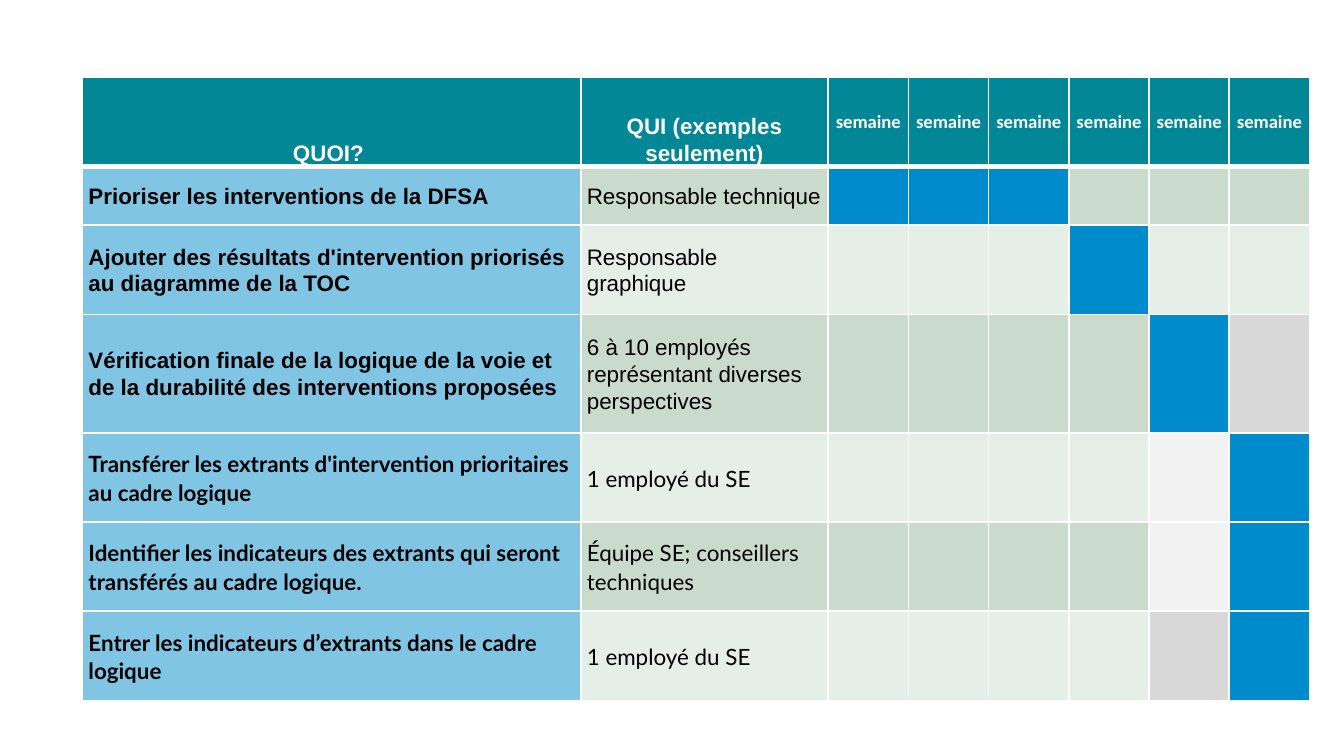
from lxml.etree import SubElement
from pptx import Presentation
from pptx.dml.color import RGBColor
from pptx.enum.text import MSO_ANCHOR as Anchor, PP_ALIGN as Align
from pptx.oxml.ns import qn
from pptx.util import Inches, Pt

TEAL, SKY, BLUE = "028796", "80C5E4", "008CCC"
SAGE, MINT = "CADBCE", "E6EEE8"
GREY, PALE = "D8D8D8", "F2F2F2"
WHITE, BLACK = "FFFFFF", "000000"

HEADINGS = ["QUOI? ", "QUI (exemples seulement)"]
WEEK, WEEK_COUNT = "semaine", 6

# task, who, font, active weeks, {week: special colour}
TASKS = [
    ("Prioriser les interventions de la DFSA", "Responsable technique",
     "Arial", [1, 2, 3], {}),
    ("Ajouter des résultats d'intervention priorisés au diagramme de la TOC",
     "Responsable graphique", "Arial", [4], {}),
    ("Vérification finale de la logique de la voie et de la durabilité "
     "des interventions proposées",
     "6 à 10 employés représentant diverses perspectives",
     "Arial", [5], {6: GREY}),
    ("Transférer les extrants d'intervention prioritaires au cadre logique",
     "1 employé du SE", "Lato", [6], {5: PALE}),
    ("Identifier les indicateurs des extrants qui seront transférés au cadre logique.",
     "Équipe SE; conseillers techniques", "Lato", [6], {5: PALE}),
    ("Entrer les indicateurs d’extrants dans le cadre logique",
     "1 employé du SE", "Lato", [6], {5: GREY}),
]

# Table geometry in points
LEFT, TOP = 44.1, 41.3
COLUMN_WIDTHS = [267, 132.6] + [43] * WEEK_COUNT
ONE_LINE, TWO_LINES, THREE_LINES = 31.6, 47.8, 63.4
ROW_HEIGHTS = [TWO_LINES, ONE_LINE, TWO_LINES, THREE_LINES] + [TWO_LINES] * 3
SIDE_MARGIN = 3.3


def color(value):
    return RGBColor.from_string(value)


def style_cell(cell, fill, top=1, bottom=1):
    """Give a cell white borders (widths in points) and a solid fill."""
    properties = cell._tc.get_or_add_tcPr()
    for side, width in (("L", 1), ("R", 1), ("T", top), ("B", bottom)):
        line = SubElement(properties, qn(f"a:ln{side}"), w=str(Pt(width)))
        solid = SubElement(line, qn("a:solidFill"))
        SubElement(solid, qn("a:srgbClr"), val=WHITE)
    cell.fill.solid()
    cell.fill.fore_color.rgb = color(fill)


def write(cell, text, font="Arial", size=12, ink=BLACK, bold=False,
          align=Align.LEFT, anchor=Anchor.MIDDLE):
    cell.margin_left = cell.margin_right = Pt(SIDE_MARGIN)
    cell.margin_top = cell.margin_bottom = 0
    cell.vertical_anchor = anchor
    paragraph = cell.text_frame.paragraphs[0]
    paragraph.alignment = align
    paragraph.line_spacing = 1.07
    run = paragraph.add_run()
    run.text = text
    run.font.name = font
    run.font.size = Pt(size)
    run.font.bold = bold
    run.font.color.rgb = color(ink)


def fill_header(plan):
    for column, heading in enumerate(HEADINGS + [WEEK] * WEEK_COUNT):
        cell = plan.cell(0, column)
        style_cell(cell, TEAL, bottom=3)
        look = (dict(font="Calibri", size=10) if heading == WEEK
                else dict(anchor=Anchor.BOTTOM))
        write(cell, heading, ink=WHITE, bold=True, align=Align.CENTER, **look)


def fill_tasks(plan):
    for row, (task, who, font, active, special) in enumerate(TASKS, start=1):
        band = SAGE if row % 2 else MINT
        colors = {**special, **dict.fromkeys(active, BLUE)}
        weeks = [colors.get(week, band) for week in range(1, WEEK_COUNT + 1)]
        for column, fill in enumerate([SKY, band] + weeks):
            style_cell(plan.cell(row, column), fill, top=3 if row == 1 else 1)
        write(plan.cell(row, 0), task, font=font, bold=True)
        write(plan.cell(row, 1), who, font=font)


def main():
    deck = Presentation()
    deck.slide_width = Inches(10)
    deck.slide_height = deck.slide_width * 9 // 16
    slide = deck.slides.add_slide(deck.slide_layouts[6])
    plan = slide.shapes.add_table(
        len(ROW_HEIGHTS), len(COLUMN_WIDTHS), Pt(LEFT), Pt(TOP),
        Pt(sum(COLUMN_WIDTHS)), Pt(sum(ROW_HEIGHTS))).table
    for column, width in zip(plan.columns, COLUMN_WIDTHS):
        column.width = Pt(width)
    for row, height in zip(plan.rows, ROW_HEIGHTS):
        row.height = Pt(height)
    fill_header(plan)
    fill_tasks(plan)
    deck.save("out.pptx")


if __name__ == "__main__":
    main()
